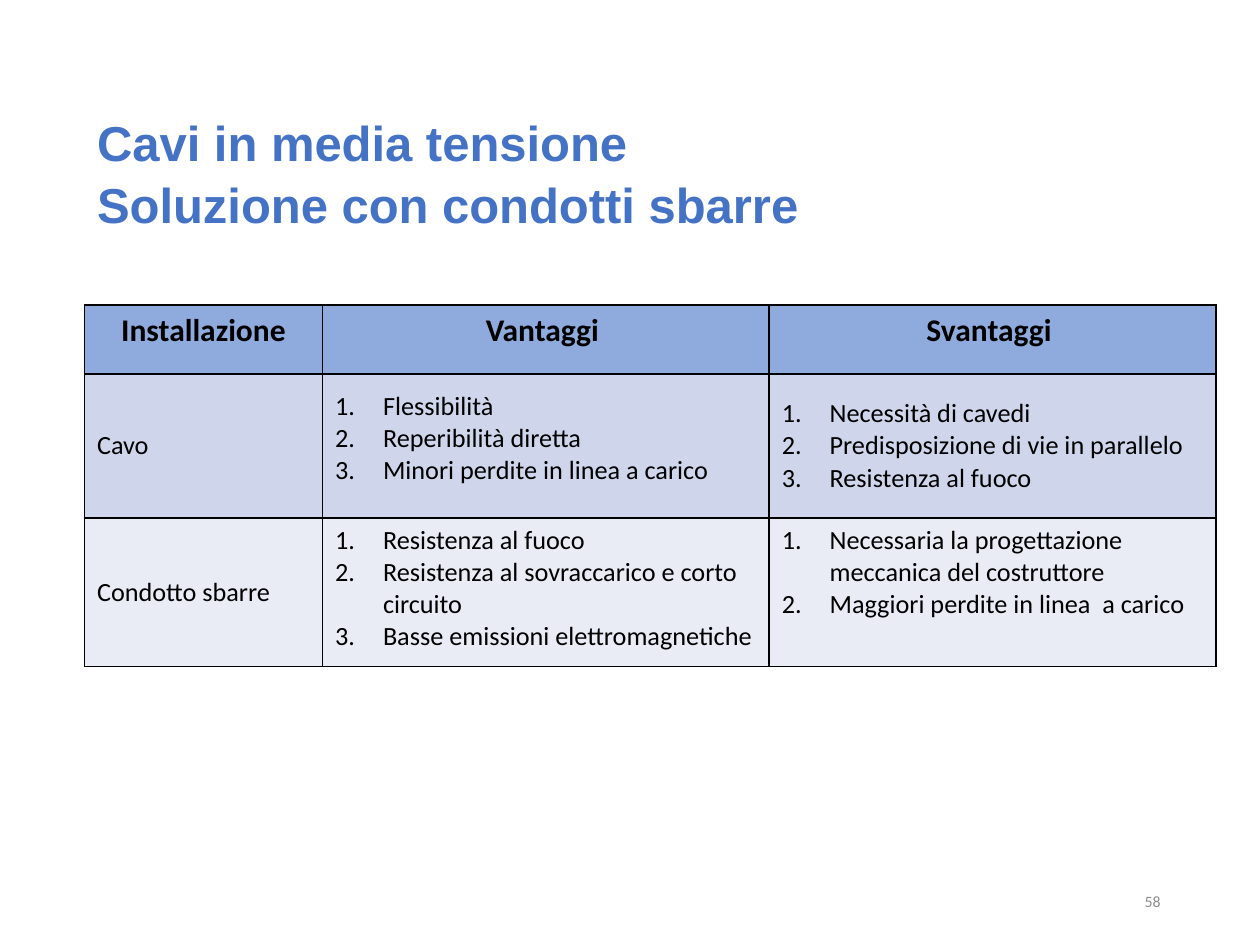
from dataclasses import dataclass

from lxml.etree import SubElement
from pptx import Presentation
from pptx.dml.color import RGBColor
from pptx.enum.text import MSO_ANCHOR, MSO_AUTO_SIZE, PP_ALIGN
from pptx.oxml.ns import qn
from pptx.util import Inches, Pt


@dataclass(frozen=True)
class Theme:
    title_font: str = "Arial"
    body_font: str = "Calibri"
    title: str = "4472C4"
    text: str = "000000"
    number: str = "8C8C8C"
    border: str = "000000"
    header_fill: str = "8FAADC"
    row_fills: tuple[str, ...] = ("CFD5EA", "E9EBF5")
    title_size: int = 28
    header_size: int = 18
    body_size: int = 15
    number_size: int = 9


@dataclass(frozen=True)
class ItemList:
    items: tuple[str, ...]
    anchor: MSO_ANCHOR = MSO_ANCHOR.TOP
    margin_top: float = 0.05


@dataclass(frozen=True)
class Installation:
    name: str
    pros: ItemList
    cons: ItemList
    height: float


THEME = Theme()
HEADERS = ("Installazione", "Vantaggi ", "Svantaggi ")
COLUMN_WIDTHS = (1.89, 3.545, 3.545)
HEADER_HEIGHT = 0.55
LIST_INDENT = 0.38
INSTALLATIONS = (
    Installation(
        "Cavo",
        ItemList(("Flessibilità", "Reperibilità diretta",
                  "Minori perdite in linea a carico"), margin_top=0.13),
        ItemList(("Necessità di cavedi", "Predisposizione di vie in parallelo",
                  "Resistenza al fuoco"), anchor=MSO_ANCHOR.MIDDLE),
        1.14,
    ),
    Installation(
        "Condotto sbarre",
        ItemList(("Resistenza al fuoco",
                  "Resistenza al sovraccarico e corto circuito",
                  "Basse emissioni elettromagnetiche")),
        ItemList(("Necessaria la progettazione meccanica del costruttore",
                  "Maggiori perdite in linea  a carico")),
        1.18,
    ),
)


def style_text(tf, font: str, size: int, color: str, bold: bool = False,
               align: PP_ALIGN = PP_ALIGN.LEFT) -> None:
    for p in tf.paragraphs:
        p.alignment = align
        for r in p.runs:
            r.font.name = font
            r.font.size = Pt(size)
            r.font.bold = bold
            r.font.color.rgb = RGBColor.from_string(color)


def number_paragraphs(tf) -> None:
    """Give every paragraph an automatic number and a hanging indent."""
    for p in tf.paragraphs:
        pPr = p._p.get_or_add_pPr()
        pPr.set("marL", str(Inches(LIST_INDENT)))
        pPr.set("indent", str(-Inches(LIST_INDENT)))
        SubElement(pPr, qn("a:buFont"), typeface="+mj-lt")
        SubElement(pPr, qn("a:buAutoNum"), type="arabicPeriod")


def frame_cell(cell, fill: str) -> None:
    """Draw the four borders of a cell, then fill it."""
    tcPr = cell._tc.get_or_add_tcPr()
    for side in ("lnL", "lnR", "lnT", "lnB"):
        ln = SubElement(tcPr, qn(f"a:{side}"), w=str(Pt(1)))
        SubElement(SubElement(ln, qn("a:solidFill")), qn("a:srgbClr"),
                   val=THEME.border)
    cell.fill.solid()
    cell.fill.fore_color.rgb = RGBColor.from_string(fill)


def fill_list_cell(cell, content: ItemList) -> None:
    tf = cell.text_frame
    tf.text = "\n".join(content.items)
    number_paragraphs(tf)
    style_text(tf, THEME.body_font, THEME.body_size, THEME.text)
    cell.vertical_anchor = content.anchor
    cell.margin_top = Inches(content.margin_top)


def add_title(slide) -> None:
    sp = slide.shapes.title
    sp.left, sp.top = Inches(0.67), Inches(0.82)
    sp.width, sp.height = Inches(8.73), Inches(1.04)
    tf = sp.text_frame
    tf.text = "Cavi in media tensione\nSoluzione con condotti sbarre"
    tf.word_wrap = True
    tf.auto_size = MSO_AUTO_SIZE.SHAPE_TO_FIT_TEXT
    tf.vertical_anchor = MSO_ANCHOR.TOP
    style_text(tf, THEME.title_font, THEME.title_size, THEME.title, True,
               PP_ALIGN.JUSTIFY)
    for p in tf.paragraphs:
        p.line_spacing = 1.05


def add_comparison(slide) -> None:
    heights = (HEADER_HEIGHT, *(i.height for i in INSTALLATIONS))
    table = slide.shapes.add_table(
        len(heights), len(HEADERS), Inches(0.67), Inches(2.42),
        Inches(sum(COLUMN_WIDTHS)), Inches(sum(heights))).table
    for column, width in zip(table.columns, COLUMN_WIDTHS):
        column.width = Inches(width)
    for row, height in zip(table.rows, heights):
        row.height = Inches(height)
    for row, fill in zip(table.rows, (THEME.header_fill, *THEME.row_fills)):
        for cell in row.cells:
            frame_cell(cell, fill)
    for cell, header in zip(table.rows[0].cells, HEADERS):
        cell.text_frame.text = header
        style_text(cell.text_frame, THEME.body_font, THEME.header_size,
                   THEME.text, True, PP_ALIGN.CENTER)
    for i, installation in enumerate(INSTALLATIONS, start=1):
        name = table.cell(i, 0)
        name.text_frame.text = installation.name
        name.vertical_anchor = MSO_ANCHOR.MIDDLE
        style_text(name.text_frame, THEME.body_font, THEME.body_size, THEME.text)
        fill_list_cell(table.cell(i, 1), installation.pros)
        fill_list_cell(table.cell(i, 2), installation.cons)


def add_page_number(slide, number: int) -> None:
    sp = slide.shapes.add_textbox(Inches(7.06), Inches(6.95),
                                  Inches(2.25), Inches(0.4))
    tf = sp.text_frame
    tf.text = str(number)
    tf.word_wrap = True
    tf.vertical_anchor = MSO_ANCHOR.MIDDLE
    style_text(tf, THEME.body_font, THEME.number_size, THEME.number,
               align=PP_ALIGN.RIGHT)


def main() -> None:
    prs = Presentation()
    prs.slide_width, prs.slide_height = Inches(10), Inches(7.5)
    slide = prs.slides.add_slide(prs.slide_layouts.get_by_name("Title Only"))
    add_title(slide)
    add_comparison(slide)
    add_page_number(slide, 58)
    prs.save("out.pptx")


if __name__ == "__main__":
    main()
